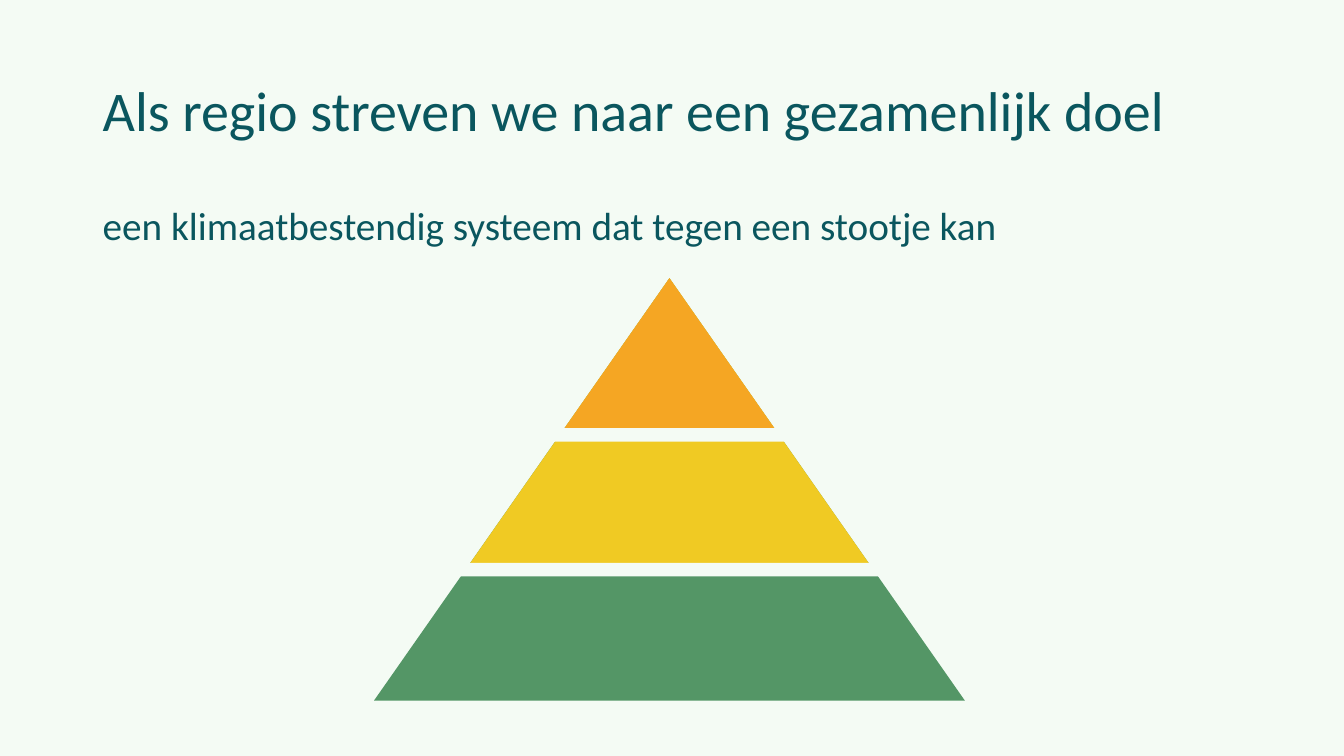
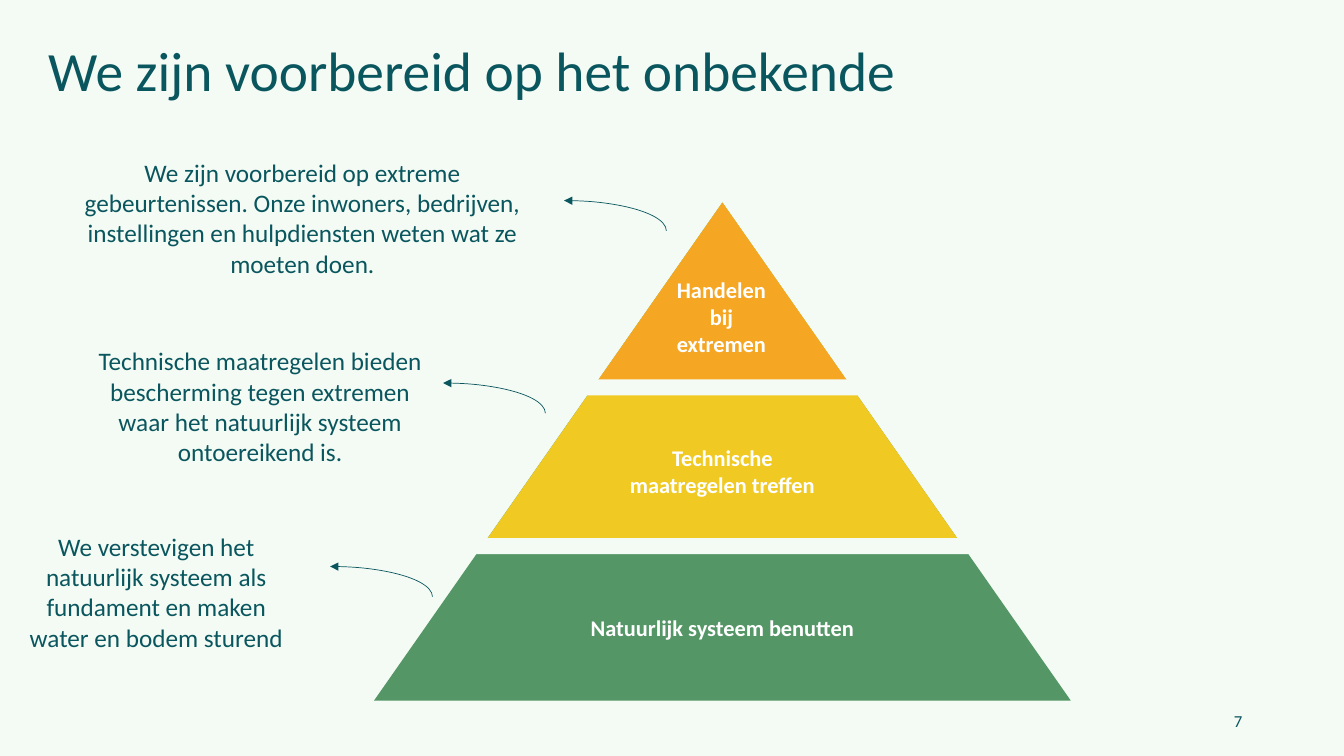
"""Build two slides that show the climate goal of the region as a layered pyramid."""
from dataclasses import dataclass

from lxml import etree
from pptx import Presentation
from pptx.dml.color import RGBColor
from pptx.enum.shapes import MSO_SHAPE
from pptx.enum.text import MSO_ANCHOR, PP_ALIGN
from pptx.oxml.ns import qn
from pptx.util import Inches, Pt

TRIANGLE, RECTANGLE, ARC = MSO_SHAPE.ISOSCELES_TRIANGLE, MSO_SHAPE.RECTANGLE, MSO_SHAPE.ARC
TOP, MIDDLE = MSO_ANCHOR.TOP, MSO_ANCHOR.MIDDLE
LEFT, CENTER, RIGHT = PP_ALIGN.LEFT, PP_ALIGN.CENTER, PP_ALIGN.RIGHT


@dataclass(frozen=True)
class Theme:
    """Colours, font and type sizes of the deck."""
    font: str = "Calibri"
    background: str = "F4FBF4"
    ink: str = "0A565E"
    white: str = "FFFFFF"
    green: str = "549666"
    yellow: str = "F0CA23"
    orange: str = "F5A623"
    title: float = 40
    title_fitted: float = 39.6
    subtitle: float = 28
    note: float = 18
    label: float = 16
    number: float = 12
    arrow: float = 0.5


THEME = Theme()

GOAL_TITLE = "Als regio streven we naar een gezamenlijk doel"
GOAL_SUBTITLE = "een klimaatbestendig systeem dat tegen een stootje kan"
GOAL_PYRAMID = (3.71, 2.76, 5.86, 4.19)

READY_TITLE = "We zijn voorbereid op het onbekende"
READY_PYRAMID = (3.71, 2.01, 6.91, 4.94)
PAGE_NUMBER = "7"

LAYERS = [(1, THEME.green), (0.676, THEME.yellow), (0.36, THEME.orange)]
GAPS = [(0.09, 0.355), (0.125, 0.674)]
GAP_WIDTH, GAP_HEIGHT = 0.749, 0.032

LABELS = [
    ("Handelen bij extremen", (6.5, 2.69, 1.31, 0.9), TOP),
    ("Technische maatregelen treffen", (5.98, 3.93, 2.37, 1.48), MIDDLE),
    ("Natuurlijk systeem benutten", (5.03, 5.46, 4.27, 1.53), MIDDLE),
]

NOTES = [
    (["We zijn voorbereid op extreme gebeurtenissen. Onze inwoners, bedrijven, "
      "instellingen en hulpdiensten weten wat ze moeten doen."], (0.6, 1.51, 4.8, 1.31)),
    (["Technische maatregelen bieden bescherming tegen extremen waar het "
      "natuurlijk systeem ontoereikend is."], (0.83, 3.38, 3.5, 1.31)),
    (["We verstevigen het natuurlijk systeem als fundament en maken",
      "water en bodem sturend"], (0.11, 5.22, 2.88, 1.62)),
]

ARROWS = [(4.58, 1.99), (3.38, 3.8), (2.26, 5.62)]
ARROW_SIZE = (2.03, 0.6)


def rgb(colour):
    return RGBColor.from_string(colour)


def inches(area):
    return [Inches(length) for length in area]


def add_page(deck):
    page = deck.slides.add_slide(deck.slide_layouts[6])
    page.background.fill.solid()
    page.background.fill.fore_color.rgb = rgb(THEME.background)
    return page


def add_text(page, lines, area, size, colour=THEME.ink, align=LEFT, anchor=TOP,
             bold=False, spacing=None):
    frame = page.shapes.add_textbox(*inches(area)).text_frame
    frame.word_wrap = True
    frame.vertical_anchor = anchor
    frame.text = "\n".join(lines)
    for para in frame.paragraphs:
        para.alignment = align
        para.line_spacing = spacing
        para.font.name = THEME.font
        para.font.size = Pt(size)
        para.font.bold = bold
        para.font.color.rgb = rgb(colour)


def add_title(page, text, area, size):
    add_text(page, [text], area, size, anchor=MIDDLE, spacing=0.9)


def add_solid(shapes, preset, area, colour):
    shape = shapes.add_shape(preset, *inches(area))
    shape.shadow.inherit = False
    shape.fill.solid()
    shape.fill.fore_color.rgb = rgb(colour)
    shape.line.fill.background()


def add_pyramid(page, area):
    left, top, width, height = area
    shapes = page.shapes.add_group_shape().shapes
    for scale, colour in LAYERS:
        inset = width * (1 - scale) / 2
        add_solid(shapes, TRIANGLE, (left + inset, top, width * scale, height * scale), colour)
    for across, down in GAPS:
        gap = (left + width * across, top + height * down, width * GAP_WIDTH, height * GAP_HEIGHT)
        add_solid(shapes, RECTANGLE, gap, THEME.background)


def add_arrow(page, corner):
    arrow = page.shapes.add_shape(ARC, *inches(corner + ARROW_SIZE))
    arrow.shadow.inherit = False
    arrow.fill.background()
    arrow.line.color.rgb = rgb(THEME.ink)
    arrow.line.width = Pt(THEME.arrow)
    outline = arrow.line._get_or_add_ln()
    etree.SubElement(outline, qn("a:headEnd"), type="triangle")


def build_goal(deck):
    page = add_page(deck)
    add_title(page, GOAL_TITLE, (0.92, 0.4, 11.5, 1.45), THEME.title)
    add_text(page, [GOAL_SUBTITLE], (0.92, 2, 11.5, 0.6), THEME.subtitle, spacing=0.9)
    add_pyramid(page, GOAL_PYRAMID)


def build_ready(deck):
    page = add_page(deck)
    add_title(page, READY_TITLE, (0.38, 0.39, 12.35, 0.67), THEME.title_fitted)
    add_pyramid(page, READY_PYRAMID)
    for text, area, anchor in LABELS:
        add_text(page, [text], area, THEME.label, THEME.white, CENTER, anchor, bold=True)
    for lines, area in NOTES:
        add_text(page, lines, area, THEME.note, align=CENTER)
    for corner in ARROWS:
        add_arrow(page, corner)
    add_text(page, [PAGE_NUMBER], (9.42, 6.95, 3, 0.4), THEME.number, align=RIGHT, anchor=MIDDLE)


def main():
    deck = Presentation()
    deck.slide_width, deck.slide_height = Inches(13.33), Inches(7.5)
    build_goal(deck)
    build_ready(deck)
    deck.save("out.pptx")


if __name__ == "__main__":
    main()
